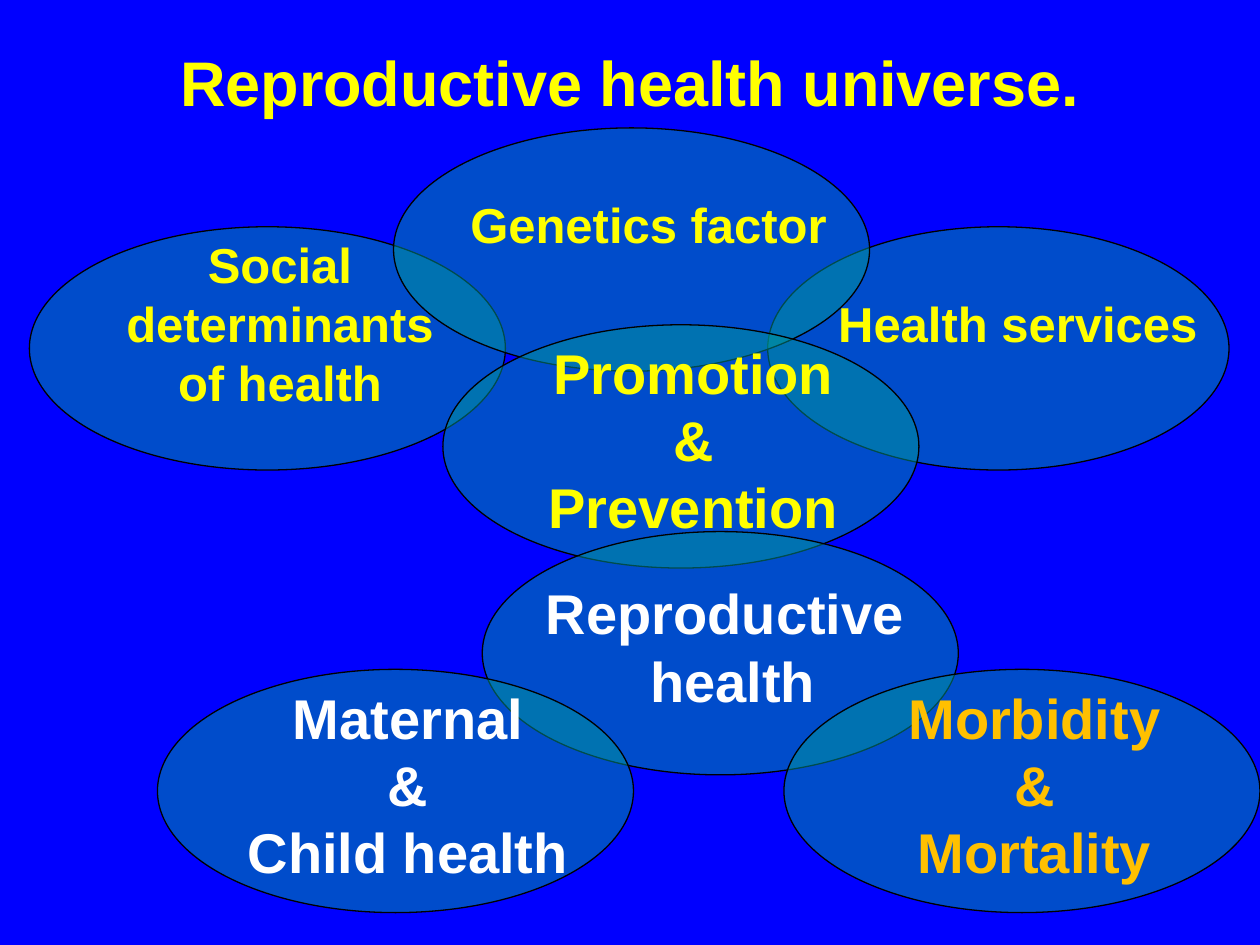
from lxml import etree
from pptx import Presentation
from pptx.dml.color import RGBColor
from pptx.enum.shapes import MSO_SHAPE
from pptx.enum.text import MSO_ANCHOR, PP_ALIGN
from pptx.oxml.ns import qn
from pptx.util import Pt

OVAL = MSO_SHAPE.OVAL
MIDDLE = MSO_ANCHOR.MIDDLE
CENTER = PP_ALIGN.CENTER

COLORS = {"background": "0000FF", "oval": "009999", "outline": "000000",
          "yellow": "FFFF00", "white": "FFFFFF", "orange": "FFC000"}
FONT = "Arial"
TITLE = "Reproductive health universe."
OVAL_WIDTH, OVAL_HEIGHT = 272, 139
UPPER_ROW, LOWER_ROW = 129.6, 382.5
LEFT_INSET, TOP_INSET, BOTTOM_INSET = 14.4, 3.6, 32.4
DROP = 20.7  # lowers the large text within its oval

# lines, left, top, width, size, colour, extra left inset, extra top inset
OVALS = [
    (["Social", "determinants", "of health"],
     16.8, UPPER_ROW, OVAL_WIDTH, 28, "yellow", 0, 0),
    (["Health services"], 438.7, UPPER_ROW, 263.6, 28, "yellow", 7.8, 0),
    (["Genetics factor"], 224.9, 73.1, OVAL_WIDTH, 28, "yellow", 5, 0),
    (["Promotion", "&", "Prevention"],
     253.1, 185.6, OVAL_WIDTH, 32, "yellow", 0, DROP),
    (["Reproductive ", "health"],
     275.6, 303.8, OVAL_WIDTH, 32, "white", 0, DROP),
    (["Maternal", "&", "Child health"],
     90, LOWER_ROW, OVAL_WIDTH, 32, "white", 0, DROP),
    (["Morbidity", "&", "Mortality"],
     448, LOWER_ROW, OVAL_WIDTH, 32, "orange", 0, DROP),
]


def color(name):
    return RGBColor.from_string(COLORS[name])


def write_lines(frame, lines, size, color_name):
    frame.vertical_anchor = MIDDLE
    for index, line in enumerate(lines):
        para = frame.paragraphs[0] if index == 0 else frame.add_paragraph()
        para.text = line
        para.alignment = CENTER
        para.font.name = FONT
        para.font.size = Pt(size)
        para.font.bold = True
        para.font.color.rgb = color(color_name)


def add_oval(slide, lines, left, top, width, size, color_name, shift, drop):
    oval = slide.shapes.add_shape(OVAL, Pt(left), Pt(top), Pt(width), Pt(OVAL_HEIGHT))
    oval.shadow.inherit = False
    oval.fill.solid()
    oval.fill.fore_color.rgb = color("oval")
    fill_color = oval.fill._xPr.find(qn("a:solidFill"))[0]
    etree.SubElement(fill_color, qn("a:alpha"), val="50000")
    oval.line.color.rgb = color("outline")
    oval.line.width = Pt(0.75)
    frame = oval.text_frame
    frame.word_wrap = False
    frame.margin_left, frame.margin_right = Pt(LEFT_INSET + shift), 0
    frame.margin_top, frame.margin_bottom = Pt(TOP_INSET + drop), Pt(BOTTOM_INSET)
    write_lines(frame, lines, size, color_name)


def main():
    deck = Presentation()
    deck.slide_width, deck.slide_height = Pt(720), Pt(540)
    slide = deck.slides.add_slide(deck.slide_layouts[6])
    slide.background.fill.solid()
    slide.background.fill.fore_color.rgb = color("background")

    title = slide.shapes.add_textbox(Pt(36), Pt(21.6), Pt(648), Pt(49.7))
    title.text_frame.word_wrap = True
    write_lines(title.text_frame, [TITLE], 36, "yellow")

    for oval in OVALS:
        add_oval(slide, *oval)
    deck.save("out.pptx")


if __name__ == "__main__":
    main()
